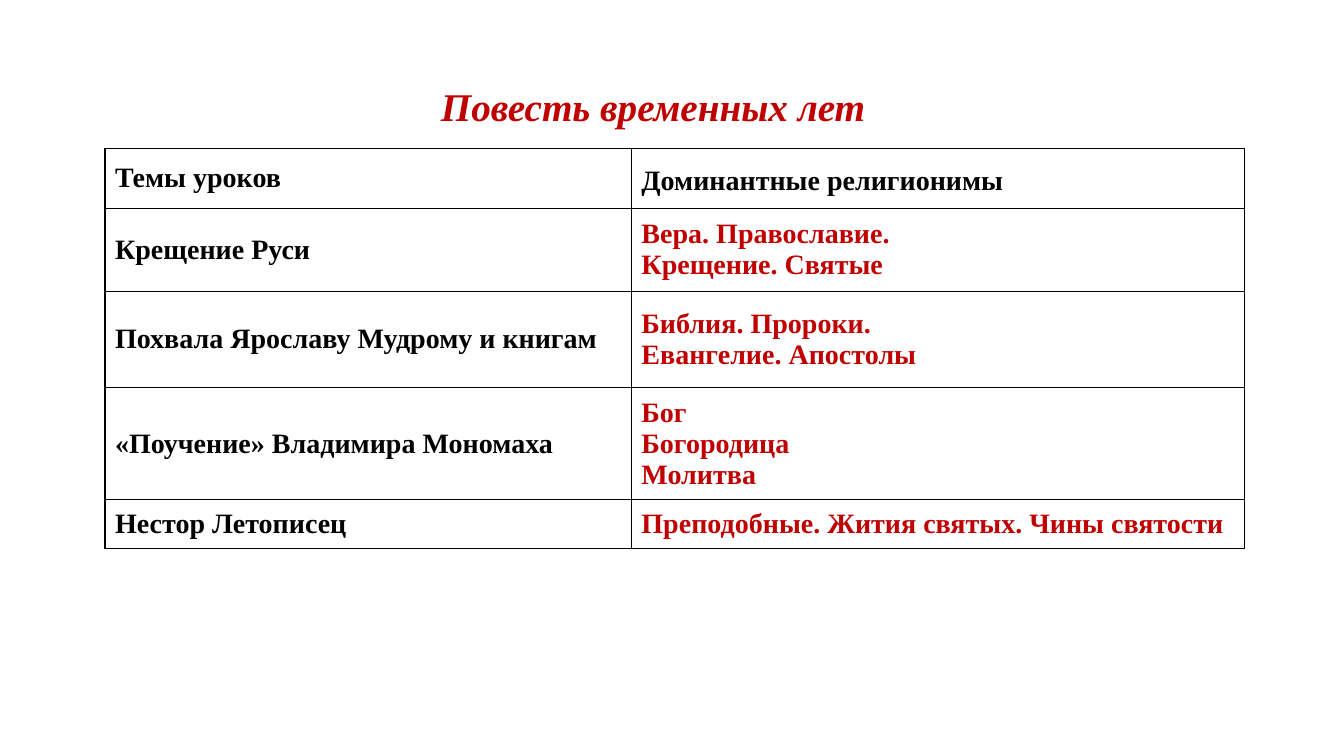
import pptx
import pptx.util
import pptx.dml.color
import pptx.enum.text
import pptx.oxml
import pptx.oxml.ns

Pt = pptx.util.Pt
ALIGN = pptx.enum.text.PP_ALIGN
MID = pptx.enum.text.MSO_ANCHOR.MIDDLE

COLORS = {"red": "C00000", "black": "000000"}
TITLE = "Повесть временных лет"
HEAD = ("Темы уроков", "Доминантные религионимы")
LESSONS = [
    ("Крещение Руси", ["Вера. Православие.", "Крещение. Святые"]),
    ("Похвала Ярославу Мудрому и книгам",
     ["Библия. Пророки.", "Евангелие. Апостолы"]),
    ("«Поучение» Владимира Мономаха", ["Бог", "Богородица", "Молитва"]),
    ("Нестор Летописец", ["Преподобные. Жития святых. Чины святости"]),
]
WIDTHS = (376, 438)
HEIGHTS = (43, 59, 69, 80, 35)
LEFT, TOP = 75, 106

CELL = {"margin_left": Pt(7.2), "margin_right": Pt(7.2), "margin_top": 0,
        "margin_bottom": 0, "vertical_anchor": MID}
FONT = {"name": "Times New Roman", "bold": True}
HEADPAR = {"alignment": ALIGN.JUSTIFY, "space_after": Pt(10)}


def apply(item, look):
    for name, value in look.items():
        setattr(item, name, value)


def write(frame, lines, size, color, look):
    for i, line in enumerate(lines):
        par = frame.paragraphs[0] if i == 0 else frame.add_paragraph()
        apply(par, look)
        run = par.add_run()
        run.text = line
        apply(run.font, {**FONT, "size": Pt(size)})
        run.font.color.rgb = pptx.dml.color.RGBColor.from_string(COLORS[color])


def border(cell):
    """Draw a thin black line on all four sides; call before filling the cell."""
    props = cell._tc.get_or_add_tcPr()
    for side in ("lnL", "lnR", "lnT", "lnB"):
        props.append(pptx.oxml.parse_xml(
            f'<a:{side} {pptx.oxml.ns.nsdecls("a")} w="{Pt(1)}"><a:solidFill>'
            f'<a:srgbClr val="{COLORS["black"]}"/></a:solidFill></a:{side}>'))


def add_grid(slide):
    table = slide.shapes.add_table(
        len(HEIGHTS), len(WIDTHS), Pt(LEFT), Pt(TOP),
        Pt(sum(WIDTHS)), Pt(sum(HEIGHTS))).table
    apply(table, {"first_row": False, "horz_banding": False})
    for col, width in zip(table.columns, WIDTHS):
        col.width = Pt(width)
    for row, height in zip(table.rows, HEIGHTS):
        row.height = Pt(height)
    for cell in table.iter_cells():
        apply(cell, CELL)
        border(cell)
        cell.fill.background()

    for c, text in enumerate(HEAD):
        look = {**HEADPAR, "line_spacing": 1.15} if c else HEADPAR
        write(table.cell(0, c).text_frame, [text], 20, "black", look)
    for r, (theme, terms) in enumerate(LESSONS, 1):
        write(table.cell(r, 0).text_frame, [theme], 20, "black",
              {"alignment": ALIGN.LEFT})
        write(table.cell(r, 1).text_frame, terms, 20, "red",
              {"alignment": ALIGN.LEFT})


def add_title(slide):
    frame = slide.shapes.add_textbox(
        Pt(238), Pt(55), Pt(457), Pt(41)).text_frame
    frame.word_wrap = True
    write(frame, [TITLE], 28, "red", {"alignment": ALIGN.CENTER})
    frame.paragraphs[0].runs[0].font.italic = True


def main():
    deck = pptx.Presentation()
    apply(deck, {"slide_width": Pt(960), "slide_height": Pt(540)})
    slide = deck.slides.add_slide(deck.slide_layouts[6])
    add_grid(slide)
    add_title(slide)
    deck.save("out.pptx")


if __name__ == "__main__":
    main()
